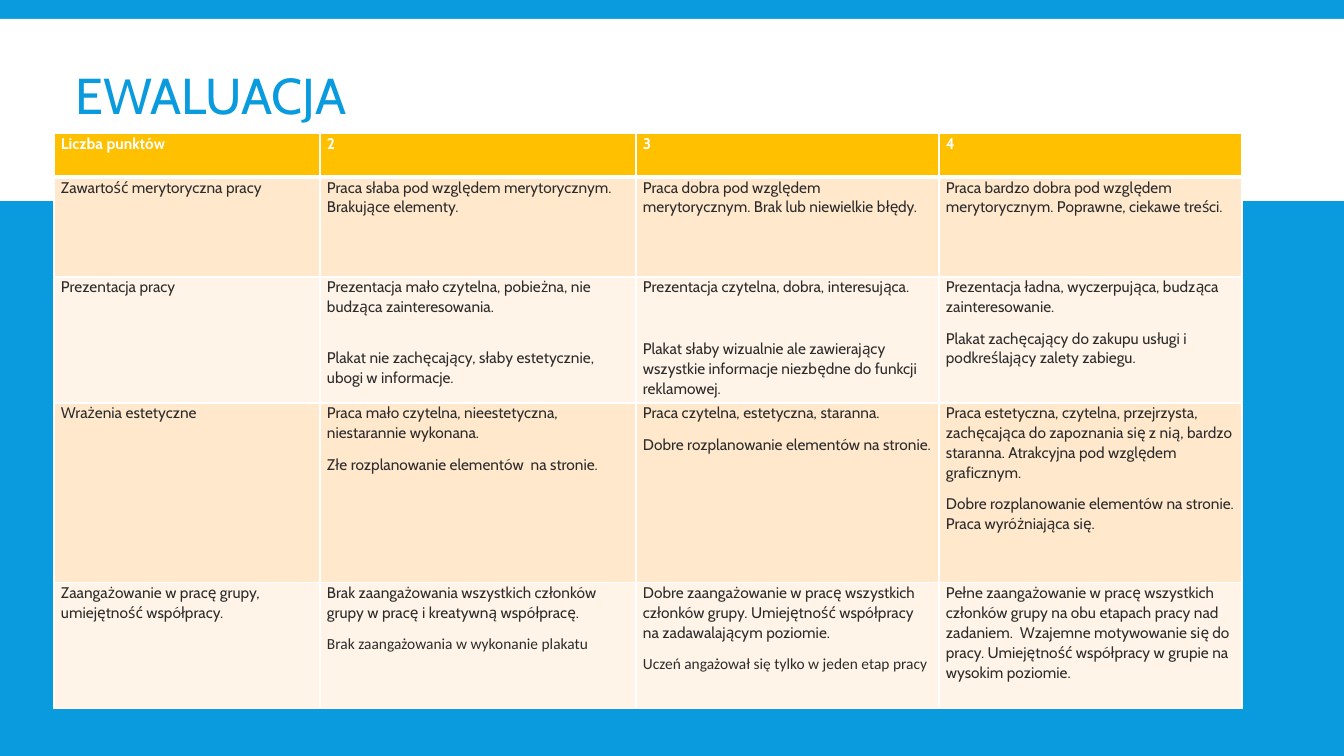
from lxml.etree import SubElement
from pptx import Presentation
from pptx.dml.color import RGBColor
from pptx.enum.shapes import MSO_SHAPE as SHAPE
from pptx.enum.text import MSO_ANCHOR as ANCHOR, MSO_AUTO_SIZE as AUTO, PP_ALIGN as ALIGN
from pptx.oxml.ns import qn
from pptx.util import Emu, Pt

COLORS = {
    "blue": "099BDD",
    "white": "FFFFFF",
    "header": "FFC000",
    "odd": "FFE8CC",
    "even": "FFF4E7",
    "text": "2C2C2C",
}
FONT, ALT_FONT = "Cabin", "Calibri"
COLUMNS = [266, 316, 303, 303]
ROWS = [44, 100, 126, 180, 126]
CRITERIA = [
    [["Liczba punktów"], ["2"], ["3"], ["4"]],
    [
        ["Zawartość merytoryczna pracy"],
        ["Praca słaba pod względem merytorycznym. Brakujące elementy."],
        ["Praca dobra pod względem merytorycznym. Brak lub niewielkie błędy."],
        ["Praca bardzo dobra pod względem merytorycznym. Poprawne, ciekawe treści."],
    ],
    [
        ["Prezentacja pracy"],
        ["Prezentacja mało czytelna, pobieżna, nie budząca zainteresowania.",
         "Plakat nie zachęcający, słaby estetycznie, ubogi w informacje."],
        ["Prezentacja czytelna, dobra, interesująca.",
         "Plakat słaby wizualnie ale zawierający wszystkie informacje niezbędne do funkcji reklamowej."],
        ["Prezentacja ładna, wyczerpująca, budząca zainteresowanie.",
         "Plakat zachęcający do zakupu usługi i podkreślający zalety zabiegu."],
    ],
    [
        ["Wrażenia estetyczne"],
        ["Praca mało czytelna, nieestetyczna, niestarannie wykonana.",
         "Złe rozplanowanie elementów  na stronie."],
        ["Praca czytelna, estetyczna, staranna.",
         "Dobre rozplanowanie elementów na stronie."],
        ["Praca estetyczna, czytelna, przejrzysta, zachęcająca do zapoznania się z nią, "
         "bardzo staranna. Atrakcyjna pod względem graficznym.",
         "Dobre rozplanowanie elementów na stronie. Praca wyróżniająca się."],
    ],
    [
        ["Zaangażowanie w pracę grupy, umiejętność współpracy."],
        ["Brak zaangażowania wszystkich członków grupy w pracę i kreatywną współpracę.",
         "Brak zaangażowania w wykonanie plakatu"],
        ["Dobre zaangażowanie w pracę wszystkich członków grupy. "
         "Umiejętność współpracy na zadawalającym poziomie.",
         "Uczeń angażował się tylko w jeden etap pracy"],
        ["Pełne zaangażowanie w pracę wszystkich członków grupy na obu etapach pracy nad "
         "zadaniem.  Wzajemne motywowanie się do pracy. Umiejętność współpracy w grupie "
         "na wysokim poziomie."],
    ],
]
WIDE_GAPS = {(2, 1): 22, (2, 2): 30}
ALT_FONT_CELLS = {(4, 1), (4, 2)}


def px(n):
    return Emu(round(n * 914400 / 100.8))


def rgb(name):
    return RGBColor.from_string(COLORS[name])


def format_paragraph(p, size, color, spacing, font=FONT, bold=False, after=0):
    p.alignment = ALIGN.LEFT
    p.line_spacing = spacing
    p.space_before, p.space_after = Pt(0), Pt(after)
    for r in p.runs:
        r.font.name, r.font.size, r.font.bold = font, Pt(size), bold
        r.font.color.rgb = rgb(color)


def add_band(slide, x, y, w, h):
    sp = slide.shapes.add_shape(SHAPE.RECTANGLE, px(x), px(y), px(w), px(h))
    sp.shadow.inherit = False
    sp.fill.solid()
    sp.fill.fore_color.rgb = rgb("white")
    sp.line.fill.background()
    slide.shapes[0].element.addprevious(sp.element)


def set_title(slide, text, x, y, w, h):
    sp = slide.shapes.title
    sp.left, sp.top, sp.width, sp.height = map(px, (x, y, w, h))
    tf = sp.text_frame
    tf.text = text
    tf.auto_size = AUTO.NONE
    tf.word_wrap = True
    tf.vertical_anchor = ANCHOR.MIDDLE
    format_paragraph(tf.paragraphs[0], 36, "blue", 0.85)


def set_borders(cell, bottom):
    tcPr = cell._tc.get_or_add_tcPr()
    for side, width in (("L", 1), ("R", 1), ("T", 1), ("B", bottom)):
        ln = SubElement(tcPr, qn(f"a:ln{side}"), w=str(Pt(width)))
        fill = SubElement(ln, qn("a:solidFill"))
        SubElement(fill, qn("a:srgbClr"), val=COLORS["white"])


def fill_cell(cell, row, col, lines):
    header = row == 0
    set_borders(cell, 3 if header else 1)
    cell.fill.solid()
    cell.fill.fore_color.rgb = rgb("header" if header else "odd" if row % 2 else "even")
    cell.margin_left = cell.margin_right = px(7)
    cell.margin_top = cell.margin_bottom = 0
    cell.vertical_anchor = ANCHOR.TOP
    tf = cell.text_frame
    tf.text = "\n".join(lines)
    for i, p in enumerate(tf.paragraphs):
        font = ALT_FONT if i and (row, col) in ALT_FONT_CELLS else FONT
        after = 8 if i else WIDE_GAPS.get((row, col), 8)
        format_paragraph(p, 11, "white" if header else "text", 1.06, font, header, after)


def add_criteria_table(slide, x, y):
    frame = slide.shapes.add_table(len(ROWS), len(COLUMNS), px(x), px(y),
                                   px(sum(COLUMNS)), px(sum(ROWS)))
    table = frame.table
    for column, width in zip(table.columns, COLUMNS):
        column.width = px(width)
    for row, height in zip(table.rows, ROWS):
        row.height = px(height)
    for row, cells in enumerate(CRITERIA):
        for col, lines in enumerate(cells):
            fill_cell(table.cell(row, col), row, col, lines)


def main():
    prs = Presentation()
    prs.slide_width, prs.slide_height = px(1344), px(756)
    slide = prs.slides.add_slide(prs.slide_layouts[5])
    slide.background.fill.solid()
    slide.background.fill.fore_color.rgb = rgb("blue")
    set_title(slide, "EWALUACJA", 65, 78, 1216, 42)
    add_band(slide, 0, 19, 1344, 182)
    add_criteria_table(slide, 54, 133)
    prs.save("out.pptx")


if __name__ == "__main__":
    main()
